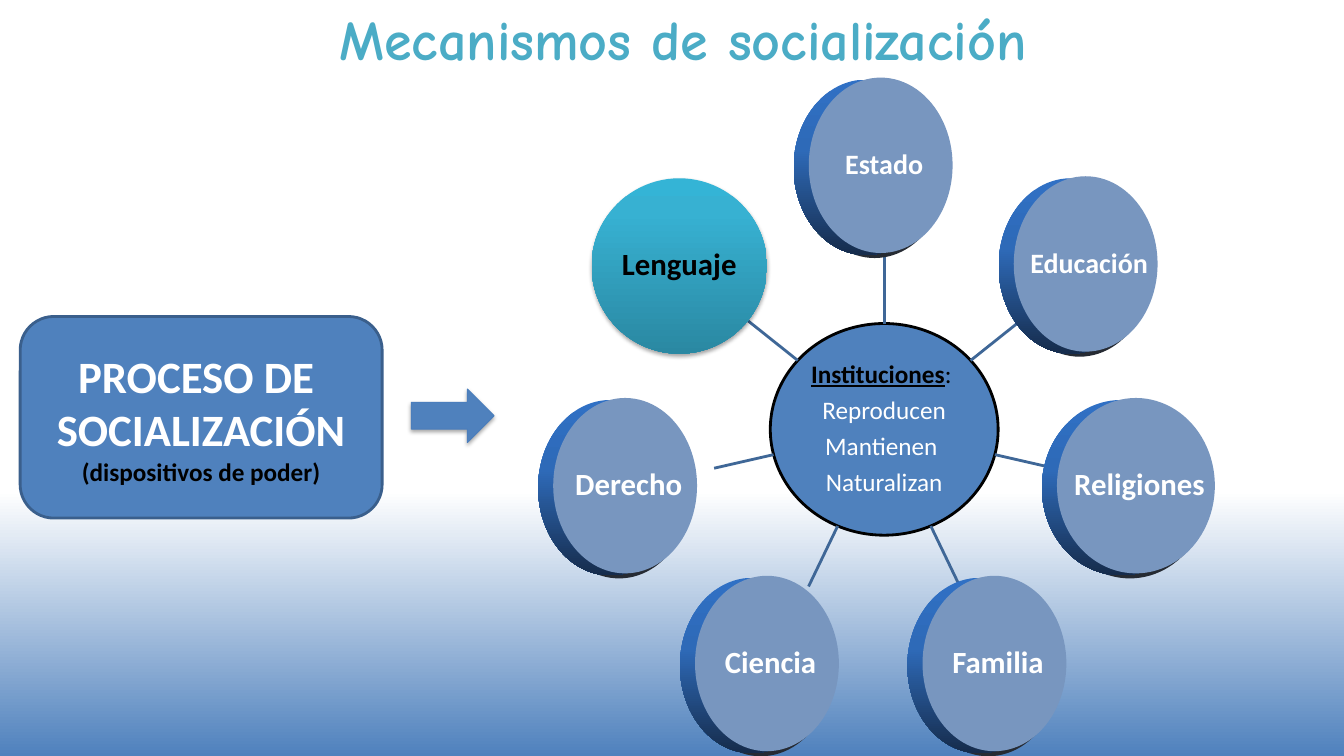
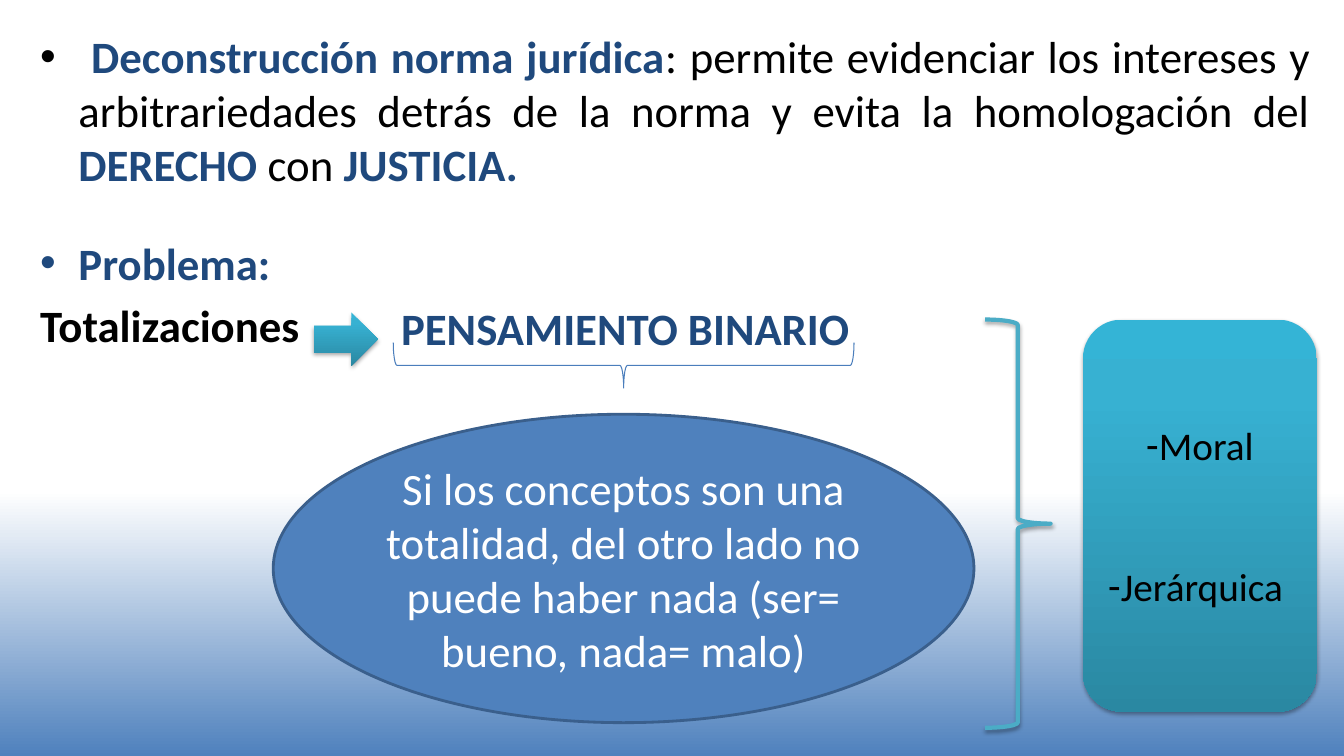
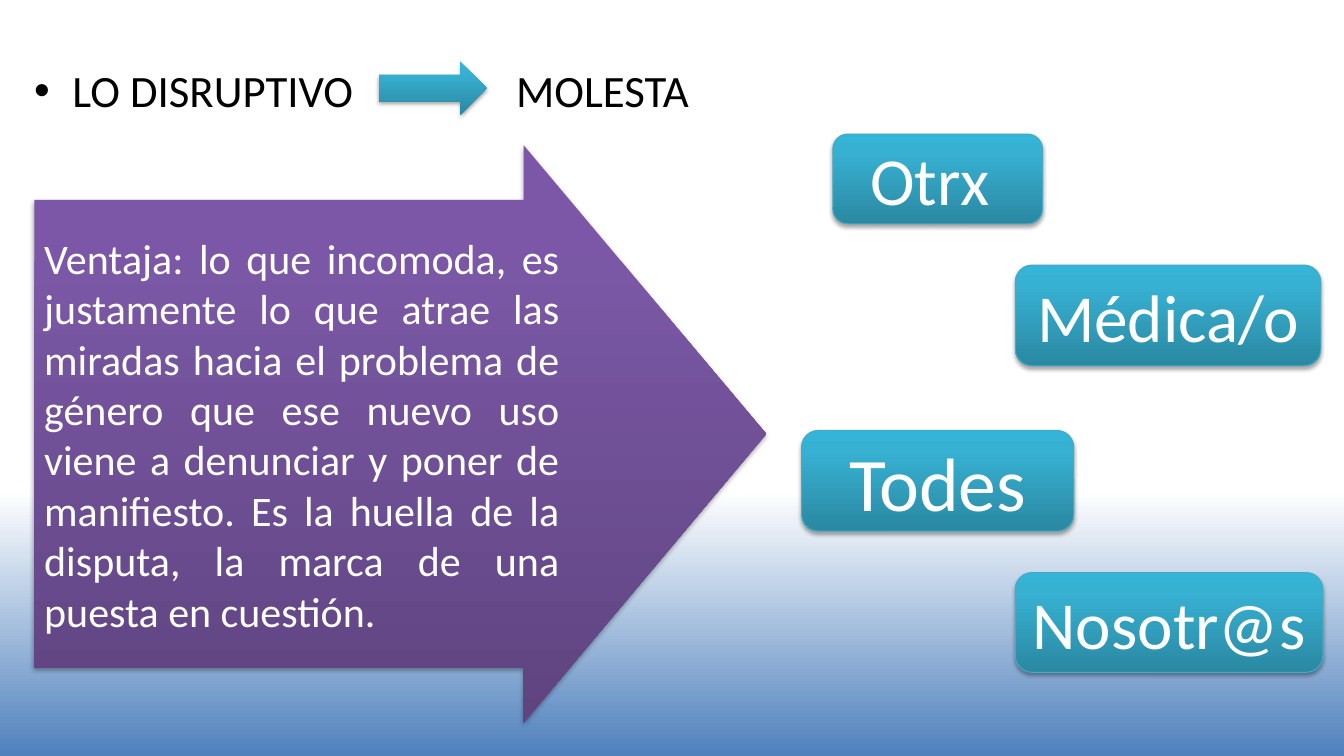
import math
from dataclasses import dataclass

from lxml import etree
from pptx import Presentation
from pptx.dml.color import RGBColor
from pptx.enum.shapes import MSO_CONNECTOR, MSO_SHAPE
from pptx.enum.text import MSO_ANCHOR, PP_ALIGN
from pptx.oxml.ns import qn
from pptx.util import Inches, Pt

ELLIPSE = MSO_SHAPE.OVAL
ROUNDED = MSO_SHAPE.ROUNDED_RECTANGLE
ARROW = MSO_SHAPE.RIGHT_ARROW
BRACE = MSO_SHAPE.RIGHT_BRACE
STRAIGHT = MSO_CONNECTOR.STRAIGHT
LEFT, CENTER, JUSTIFY = PP_ALIGN.LEFT, PP_ALIGN.CENTER, PP_ALIGN.JUSTIFY
TOP, MIDDLE = MSO_ANCHOR.TOP, MSO_ANCHOR.MIDDLE

WHITE = RGBColor(0xFF, 0xFF, 0xFF)
BLACK = RGBColor(0x00, 0x00, 0x00)
BLUE = RGBColor(0x4F, 0x81, 0xBD)
NAVY = RGBColor(0x1F, 0x49, 0x7D)
TEAL = RGBColor(0x4B, 0xAC, 0xC6)
TEAL_EDGE = RGBColor(0x46, 0xAA, 0xC5)
BLUE_OUTLINE = RGBColor(0x3A, 0x5F, 0x8C)
BLUE_EDGE = RGBColor(0x4B, 0x7E, 0xBC)
SPOKE = RGBColor(0x3F, 0x67, 0x97)
COIN_FACE = RGBColor(0x78, 0x96, 0xBF)
COIN_SHADE = RGBColor(0x26, 0x2B, 0x33)

# Gradients run from top to bottom: (percent, colour)
SKY = ((0, WHITE), (65, WHITE), (100, BLUE))
TEAL_GLOSS = ((0, RGBColor(0x34, 0xB4, 0xD6)), (20, RGBColor(0x37, 0xB1, 0xD2)),
              (100, RGBColor(0x2A, 0x88, 0xA2)))
PURPLE_GLOSS = ((0, RGBColor(0x7C, 0x57, 0xA8)), (20, RGBColor(0x7B, 0x58, 0xA6)),
                (100, RGBColor(0x5F, 0x44, 0x80)))
COIN_RIM = ((0, RGBColor(0x30, 0x70, 0xC4)), (40, RGBColor(0x2E, 0x6A, 0xB8)),
            (100, RGBColor(0x16, 0x2C, 0x4C)))

BODY_FONT = "Calibri"
TITLE_FONT = "Comic Neue"


@dataclass
class Span:
    text: str
    color: RGBColor = None
    bold: bool = None
    underline: bool = None


@dataclass
class Para:
    spans: object
    size: float
    color: RGBColor = WHITE
    bold: bool = False
    align: PP_ALIGN = CENTER
    before: float = 0
    after: float = 0
    line: float = 1.0
    bullet: str = ""
    hang: float = 0
    font: str = BODY_FONT


def add_xml(parent, tag, **attributes):
    return etree.SubElement(parent, qn(tag), {key: str(value) for key, value in attributes.items()})


def paint_gradient(fill, element, stops):
    fill.gradient()
    fill.gradient_angle = 270
    stop_list = next(element.iter(qn("a:gsLst")))
    for old_stop in list(stop_list):
        stop_list.remove(old_stop)
    for percent, color in stops:
        stop = add_xml(stop_list, "a:gs", pos=percent * 1000)
        add_xml(stop, "a:srgbClr", val=color)


class Slides:
    """Holds the deck, its shared style and the page being filled."""

    def __init__(self):
        self.deck = Presentation()
        self.deck.slide_width = Inches(13.33)
        self.deck.slide_height = Inches(7.5)
        self.page = None

    def new_page(self):
        self.page = self.deck.slides.add_slide(self.deck.slide_layouts[6])
        fill = self.page.background.fill
        paint_gradient(fill, self.page.element, SKY)

    def put_text(self, shape, paras, anchor=MIDDLE, inset=None, wrap=True):
        frame = shape.text_frame
        frame.word_wrap = wrap
        frame.vertical_anchor = anchor
        if inset is not None:
            frame.margin_left = frame.margin_right = Inches(inset)
            frame.margin_top = frame.margin_bottom = Inches(inset)
        for index, para in enumerate(paras):
            paragraph = frame.paragraphs[0] if index == 0 else frame.add_paragraph()
            paragraph.alignment = para.align
            paragraph.space_before = Pt(para.before)
            paragraph.space_after = Pt(para.after)
            paragraph.line_spacing = para.line
            if para.bullet:
                properties = paragraph._p.get_or_add_pPr()
                properties.set("marL", str(Inches(para.hang)))
                properties.set("indent", str(-Inches(para.hang)))
                add_xml(properties, "a:buFont", typeface="Arial")
                add_xml(properties, "a:buChar", char=para.bullet)
            font = paragraph.font
            font.name, font.size, font.bold = para.font, Pt(para.size), para.bold
            font.color.rgb = para.color
            spans = [Span(para.spans)] if isinstance(para.spans, str) else para.spans
            for span in spans:
                run = paragraph.add_run()
                run.text = span.text
                if span.color is not None:
                    run.font.color.rgb = span.color
                if span.bold is not None:
                    run.font.bold = span.bold
                if span.underline is not None:
                    run.font.underline = span.underline

    def text(self, box, paras, anchor=MIDDLE):
        text_box = self.page.shapes.add_textbox(*map(Inches, box))
        self.put_text(text_box, paras, anchor)

    def title(self, words):
        self.text((1.08, 0, 11.39, 0.76),
                  [Para(words, 40, TEAL, bold=True, font=TITLE_FONT)])

    def shape(self, kind, box, fill=None, line=None, width=0.75, shadow=False):
        """fill is a colour, a tuple of gradient stops, or None."""
        shape = self.page.shapes.add_shape(kind, *map(Inches, box))
        if fill is None:
            shape.fill.background()
        elif isinstance(fill, RGBColor):
            shape.fill.solid()
            shape.fill.fore_color.rgb = fill
        else:
            paint_gradient(shape.fill, shape.element, fill)
        if line is None:
            shape.line.fill.background()
        else:
            shape.line.color.rgb = line
            shape.line.width = Pt(width)
        shape.shadow.inherit = False
        if shadow:
            effects = next(shape.element.iter(qn("a:effectLst")))
            outer = add_xml(effects, "a:outerShdw", blurRad=Pt(3.1), dist=Pt(1.8),
                            dir=90 * 60000, rotWithShape=0)
            color = add_xml(outer, "a:srgbClr", val=BLACK)
            add_xml(color, "a:alpha", val=35000)
        return shape

    def glossy(self, kind, box, line=None):
        return self.shape(kind, box, TEAL_GLOSS, line, shadow=True)

    def spoke(self, start, end):
        spoke = self.page.shapes.add_connector(STRAIGHT, *map(Inches, (*start, *end)))
        spoke.line.color.rgb = SPOKE
        spoke.line.width = Pt(2)
        add_xml(spoke.element.spPr, "a:effectLst")

    def coin(self, center, width, height, label):
        """Disc turned to the right, with its thick rim showing on the left."""
        face_width = 0.82 * width
        left = center[0] - 0.43 * width
        top = center[1] - height / 2 - 0.02
        layers = ((-0.06, 0.05, COIN_SHADE), (-0.15, 0.02, COIN_RIM), (0, 0, COIN_FACE))
        for shift, drop, fill in layers:
            face = self.shape(ELLIPSE, (left + shift, top + drop, face_width, height), fill)
        self.put_text(face, [label], inset=0.02, wrap=False)
        face.text_frame.margin_left = Inches(0.09)


def build_mechanisms(slides):
    slides.new_page()
    slides.title("Mecanismos de socialización")

    hub_x, hub_y, hub_width, hub_height = 8.77, 4.26, 2.26, 2.1
    hub = slides.shape(ELLIPSE, (hub_x - hub_width / 2, hub_y - hub_height / 2,
                                 hub_width, hub_height), BLUE, BLACK, 2)
    heading = [Span("Instituciones", BLACK, True, True), Span(": ", BLACK)]
    hub_lines = (heading, "Reproducen", "Mantienen ", "Naturalizan")
    slides.put_text(hub, [Para(words, 18, after=6.3, line=0.9) for words in hub_lines],
                    inset=0.01)

    ring_radius, spoke_radius, disc = 2.6, 1.73, 1.74
    ring = (("Estado", 20, disc), ("Educación", 20, disc), ("Religiones", 22, 1.91),
            ("Familia", 22, disc), ("Ciencia", 22, disc), ("Derecho", 22, disc),
            ("Lenguaje", 22, disc))
    for index, (name, size, width) in enumerate(ring):
        angle = math.tau * index / len(ring) - math.pi / 2
        cos, sin = math.cos(angle), math.sin(angle)
        hub_radius = 1 / math.hypot(2 * cos / hub_width, 2 * sin / hub_height)
        start, end, center = [(hub_x + radius * cos, hub_y + radius * sin)
                              for radius in (hub_radius, spoke_radius, ring_radius)]
        slides.spoke(start, end)
        label = Para(name, size, bold=True, line=0.9)
        if name == "Lenguaje":
            label.color = BLACK
            language = slides.glossy(
                ELLIPSE, (center[0] - disc / 2, center[1] - disc / 2, disc, disc))
            slides.put_text(language, [label], inset=0.02, wrap=False)
        else:
            slides.coin(center, width, disc, label)

    process = slides.shape(ROUNDED, (0.2, 3.14, 3.59, 2), BLUE, BLUE_OUTLINE, 2)
    slides.put_text(process, [
        Para("PROCESO DE ", 32, bold=True),
        Para("SOCIALIZACIÓN", 32, bold=True),
        Para("(dispositivos de poder)", 18, BLACK, bold=True),
    ])
    slides.shape(ARROW, (4.08, 3.86, 0.82, 0.53), BLUE, BLUE_EDGE, shadow=True)


def build_deconstruction(slides):
    slides.new_page()
    definition = [
        Span(" "),
        Span("Deconstrucción norma jurídica", NAVY, True),
        Span(": permite evidenciar los intereses y arbitrariedades detrás de la norma "
             "y evita la homologación del "),
        Span("DERECHO", NAVY, True),
        Span(" con "),
        Span("JUSTICIA. ", NAVY, True),
    ]
    slides.text((0.3, 0.24, 12.8, 3.4), [
        Para(definition, 32, BLACK, align=JUSTIFY, before=6.4, bullet="•", hang=0.38),
        Para("Problema:", 32, NAVY, True, LEFT, before=32, bullet="•", hang=0.38),
        Para("Totalizaciones", 32, BLACK, True, LEFT, before=6.4),
    ], TOP)
    slides.text((3.88, 2.95, 5, 0.6), [Para("PENSAMIENTO BINARIO", 32, NAVY, True, LEFT)])

    binary_brace = slides.shape(BRACE, (5.96, 1.34, 0.45, 4.57), line=BLUE_EDGE)
    binary_brace.rotation = 90
    slides.glossy(ARROW, (3.11, 3.1, 0.64, 0.53))
    concept = slides.shape(ELLIPSE, (2.71, 4.11, 6.95, 3.06), BLUE, BLUE_OUTLINE, 2)
    slides.put_text(concept, [Para("Si los conceptos son una totalidad, del otro lado no puede "
                                   "haber nada (ser= bueno, nada= malo)", 32)])
    slides.shape(BRACE, (9.77, 3.17, 0.65, 4.05), line=TEAL, width=3, shadow=True)
    traits = slides.glossy(ROUNDED, (10.74, 3.17, 2.32, 3.89))
    slides.put_text(traits, [Para("Moral", 28, BLACK, bullet="-"),
                             Para("Jerárquica ", 28, BLACK, before=67, bullet="-")])


def build_disruption(slides):
    slides.new_page()
    slides.text((0.24, 0.59, 3.6, 0.6),
                [Para("LO DISRUPTIVO", 32, BLACK, align=LEFT, bullet="•", hang=0.38)])
    slides.text((5.02, 0.59, 2.2, 0.6), [Para("MOLESTA", 32, BLACK, align=LEFT)])
    slides.glossy(ARROW, (3.76, 0.61, 1.07, 0.53))

    words = (("Otrx ", 48, (8.26, 1.33, 2.08, 0.89)),
             ("Médica/o", 48, (10.07, 2.63, 3.03, 1)),
             ("Todes", 54, (7.95, 4.27, 2.7, 1)),
             ("Nosotr@s", 48, (10.07, 5.68, 3.05, 0.99)))
    for word, size, box in words:
        slides.put_text(slides.glossy(ROUNDED, box, TEAL_EDGE), [Para(word, size)])

    advantage = slides.shape(ARROW, (0.34, 1.44, 7.26, 5.73), PURPLE_GLOSS, shadow=True)
    advantage.adjustments[0] = 0.81
    advantage.adjustments[1] = 0.42
    slides.put_text(advantage, [Para(
        "Ventaja: lo que incomoda, es justamente lo que atrae las miradas hacia el problema "
        "de género que ese nuevo uso viene a denunciar y poner de manifiesto. Es la huella "
        "de la disputa, la marca de una puesta en cuestión. ", 30, align=JUSTIFY)])


def main():
    slides = Slides()
    build_mechanisms(slides)
    build_deconstruction(slides)
    build_disruption(slides)
    slides.deck.save("out.pptx")


if __name__ == "__main__":
    main()
